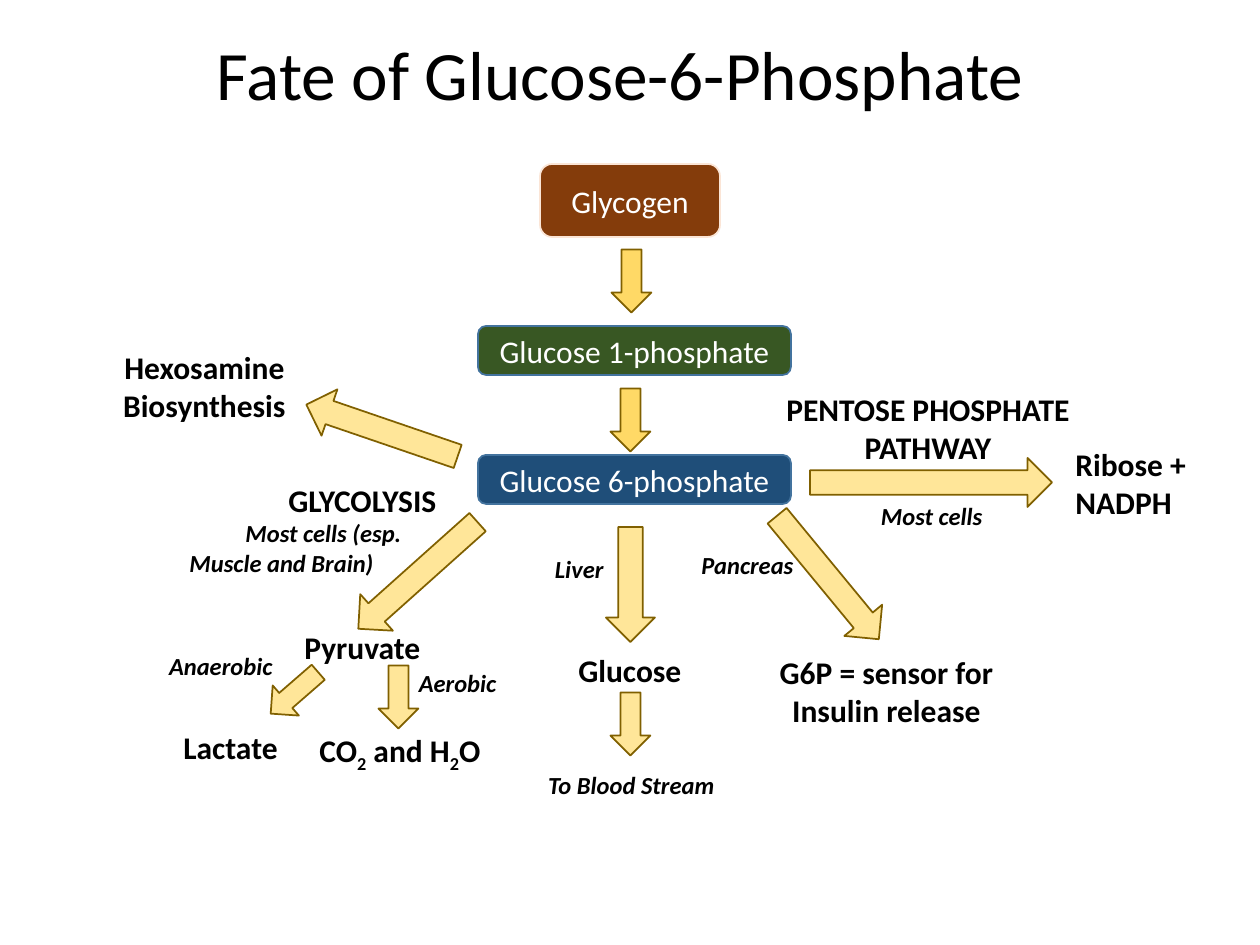
from dataclasses import dataclass

from pptx import Presentation, util as u
from pptx.dml.color import RGBColor
from pptx.enum import shapes, text

PX = 914400 / 126
FONT = "Calibri"
COLORS = {
    "black": "000000", "white": "FFFFFF",
    "glycogen": "843C0B", "glycogen_line": "FBE5D6",
    "g1p": "385723", "g6p": "1F4E79", "phosphate_line": "43739E",
    "pale": "FFE699", "gold": "FFD966", "arrow_line": "806000",
}
LEFT, CENTER, RIGHT = text.PP_ALIGN.LEFT, text.PP_ALIGN.CENTER, text.PP_ALIGN.RIGHT


@dataclass
class Metabolite:
    name: str
    left: int
    top: int
    width: int
    height: int
    fill: str
    line: str


@dataclass
class Arrow:
    left: int
    top: int
    width: int
    height: int
    rotation: float
    fill: str = "pale"


@dataclass
class Label:
    """A bold product or pathway name, or an italic note on where it happens."""
    words: str
    left: int
    top: int
    width: int
    align: int = LEFT
    note: bool = False
    wrap: bool = False
    lines: int = 1
    first_indent: int = 0


def px(value: float) -> int:
    return u.Emu(round(value * PX))


def rgb(name: str) -> RGBColor:
    return RGBColor.from_string(COLORS[name])


def write(frame, words: str, *, size: float, color="black", align=LEFT,
          bold=False, italic=False, first_indent=0) -> None:
    """Fill a frame, one paragraph per line; the character after "_" is a subscript."""
    for index, line in enumerate(words.split("\n")):
        paragraph = frame.paragraphs[0] if index == 0 else frame.add_paragraph()
        paragraph.alignment = align
        if index == 0 and first_indent:
            paragraph._p.get_or_add_pPr().set("marL", str(px(first_indent)))
        normal, *rest = line.split("_")
        pieces = [(normal, False)]
        for part in rest:
            pieces += [(part[0], True), (part[1:], False)]
        for piece, subscript in pieces:
            run = paragraph.add_run()
            run.text = piece
            font = run.font
            font.name, font.size = FONT, u.Pt(size)
            font.bold, font.italic = bold, italic
            font.color.rgb = rgb(color)
            if subscript:
                font._element.set("baseline", "-25000")


def add_block(slide, kind, part, fill: str, line: str):
    block = slide.shapes.add_shape(
        kind, px(part.left), px(part.top), px(part.width), px(part.height))
    block.shadow.inherit = False
    block.fill.solid()
    block.fill.fore_color.rgb = rgb(fill)
    block.line.color.rgb = rgb(line)
    block.line.width = u.Pt(1)
    return block


def add_metabolite(slide, part: Metabolite) -> None:
    block = add_block(slide, shapes.MSO_SHAPE.FLOWCHART_ALTERNATE_PROCESS,
                      part, part.fill, part.line)
    block.text_frame.vertical_anchor = text.MSO_ANCHOR.MIDDLE
    write(block.text_frame, part.name, size=18, color="white", align=CENTER)


def add_arrow(slide, part: Arrow) -> None:
    block = add_block(slide, shapes.MSO_SHAPE.LEFT_ARROW, part, part.fill, "arrow_line")
    block.rotation = part.rotation


def add_label(slide, part: Label) -> None:
    line_height = 29 if part.note else 38
    lines = max(part.lines, part.words.count("\n") + 1)
    box = slide.shapes.add_textbox(
        px(part.left), px(part.top), px(part.width), px(lines * line_height + 13))
    box.text_frame.word_wrap = part.wrap
    write(box.text_frame, part.words, size=14 if part.note else 18, align=part.align,
          bold=True, italic=part.note, first_indent=part.first_indent)


METABOLITES = [
    Metabolite("Glycogen", 540, 164, 180, 73, "glycogen", "glycogen_line"),
    Metabolite("Glucose 1-phosphate", 478, 326, 313, 49, "g1p", "phosphate_line"),
    Metabolite("Glucose 6-phosphate", 478, 455, 313, 49, "g6p", "phosphate_line"),
]

ARROWS = [
    Arrow(600, 261, 63, 40, 270, "gold"),   # glycogen to G1P
    Arrow(599, 400, 63, 40, 270, "gold"),   # G1P to G6P
    Arrow(302, 406, 160, 49, 18.9),         # to hexosamine
    Arrow(338, 551, 160, 49, 318.2),        # to pyruvate
    Arrow(263, 673, 63, 40, 319),           # to lactate
    Arrow(367, 677, 63, 40, 270),           # to CO2 and water
    Arrow(573, 560, 115, 49, 270),          # to glucose
    Arrow(599, 704, 63, 40, 270),           # to blood stream
    Arrow(810, 458, 242, 49, 180),          # to ribose
    Arrow(748, 553, 160, 49, 230.5),        # to insulin release
]

LABELS = [
    Label("Hexosamine Biosynthesis", 96, 342, 217, CENTER, wrap=True, lines=2),
    Label("GLYCOLYSIS", 276, 475, 175),
    Label("Most cells (esp.\nMuscle and Brain)", 177, 512, 270, note=True, wrap=True,
          first_indent=56),
    Label("Pyruvate", 292, 622, 142),
    Label("Anaerobic", 155, 645, 130, RIGHT, note=True),
    Label("Aerobic", 406, 662, 103, RIGHT, note=True),
    Label("Lactate", 171, 722, 121),
    Label("CO_2 and H_2O", 307, 725, 190),
    Label("Liver", 542, 548, 74, RIGHT, note=True),
    Label("Glucose", 566, 645, 128),
    Label("To Blood Stream", 534, 764, 193, RIGHT, note=True),
    Label("PENTOSE PHOSPHATE\nPATHWAY", 772, 384, 312, CENTER),
    Label("Most cells", 867, 495, 128, RIGHT, note=True),
    Label("Ribose +\nNADPH", 1063, 439, 144),
    Label("Pancreas", 688, 544, 118, RIGHT, note=True),
    Label("G6P = sensor for\nInsulin release", 766, 647, 241, CENTER),
]


def main() -> None:
    deck = Presentation()
    deck.slide_width, deck.slide_height = px(1260), px(945)
    slide = deck.slides.add_slide(deck.slide_layouts[5])

    # Title
    title = slide.shapes.title
    title.left, title.top, title.width, title.height = px(204), px(25), px(900), px(107)
    title.text_frame.auto_size = text.MSO_AUTO_SIZE.NONE
    title.text_frame.vertical_anchor = text.MSO_ANCHOR.MIDDLE
    write(title.text_frame, "Fate of Glucose-6-Phosphate", size=39.6)
    title.text_frame.paragraphs[0].line_spacing = 0.9

    # Pathway diagram
    for metabolite in METABOLITES:
        add_metabolite(slide, metabolite)
    for arrow in ARROWS:
        add_arrow(slide, arrow)
    for label in LABELS:
        add_label(slide, label)

    deck.save("out.pptx")


if __name__ == "__main__":
    main()
